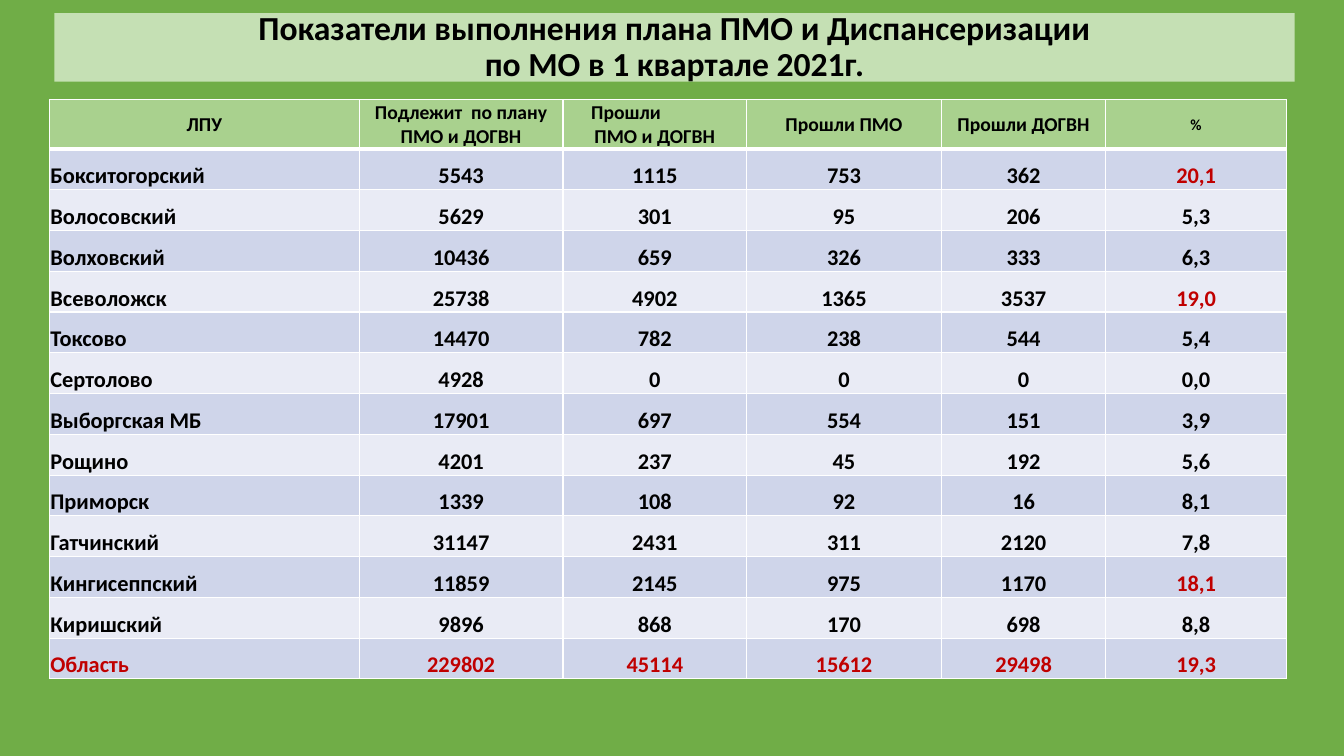
from lxml.etree import SubElement
from pptx import Presentation
from pptx.dml.color import RGBColor
from pptx.enum.shapes import MSO_SHAPE
from pptx.enum.text import MSO_ANCHOR, PP_ALIGN
from pptx.oxml.ns import qn
from pptx.util import Inches, Pt

COLORS = {
    "page": "70AD47", "title": "C5E0B4", "header": "A9D18E",
    "band": "CFD5EA", "light": "E9EBF5", "border": "FFFFFF",
    "text": "000000", "accent": "C00000",
}
FONT = "Calibri"
TITLE_LINES = ["Показатели выполнения плана ПМО и Диспансеризации", "по МО в 1 квартале 2021г."]
HEADERS = [["ЛПУ"], ["Подлежит  по плану ПМО и ДОГВН"], ["Прошли", "ПМО и ДОГВН"],
           ["Прошли ПМО"], ["Прошли ДОГВН"], ["%"]]
COLUMN_SHARES = [3.07, 2.02, 1.82, 1.93, 1.63, 1.79]
HEADER_SHARE = 0.085
PERCENT_COLUMN = 5
HIGH_PERCENT = 18
TOTAL_NAME = "Область"
ROWS = [
    ["Бокситогорский", "5543", "1115", "753", "362", "20,1"],
    ["Волосовский", "5629", "301", "95", "206", "5,3"],
    ["Волховский", "10436", "659", "326", "333", "6,3"],
    ["Всеволожск", "25738", "4902", "1365", "3537", "19,0"],
    ["Токсово", "14470", "782", "238", "544", "5,4"],
    ["Сертолово", "4928", "0", "0", "0", "0,0"],
    ["Выборгская МБ", "17901", "697", "554", "151", "3,9"],
    ["Рощино", "4201", "237", "45", "192", "5,6"],
    ["Приморск", "1339", "108", "92", "16", "8,1"],
    ["Гатчинский", "31147", "2431", "311", "2120", "7,8"],
    ["Кингисеппский", "11859", "2145", "975", "1170", "18,1"],
    ["Киришский", "9896", "868", "170", "698", "8,8"],
    [TOTAL_NAME, "229802", "45114", "15612", "29498", "19,3"],
]


def color(name):
    return RGBColor.from_string(COLORS[name])


def paint(target, name):
    target.fill.solid()
    target.fill.fore_color.rgb = color(name)


def add_span(para, text, size, ink="text"):
    span = para.add_run()
    span.text = text
    span.font.name = FONT
    span.font.size = Pt(size)
    span.font.bold = True
    span.font.color.rgb = color(ink)


def add_title(page, left, top, width, height):
    box = page.shapes.add_shape(MSO_SHAPE.RECTANGLE, left, top, width, height)
    box.shadow.inherit = False
    box.line.fill.background()
    paint(box, "title")
    frame = box.text_frame
    frame.word_wrap = True
    frame.vertical_anchor = MSO_ANCHOR.MIDDLE
    frame.margin_top = frame.margin_bottom = Inches(0.05)
    para = frame.paragraphs[0]
    para.alignment = PP_ALIGN.CENTER
    para.line_spacing = 0.9
    for index, line in enumerate(TITLE_LINES):
        if index:
            para.add_line_break()
        add_span(para, line, 24)


def add_borders(cell, top=1, bottom=1):
    """Draw the four cell borders; must run before the cell is filled."""
    properties = cell._tc.get_or_add_tcPr()
    for side, points in (("L", 1), ("R", 1), ("T", top), ("B", bottom)):
        line = SubElement(properties, qn(f"a:ln{side}"), w=str(Pt(points)))
        fill = SubElement(line, qn("a:solidFill"))
        SubElement(fill, qn("a:srgbClr"), val=COLORS["border"])


def fill_cell(cell, lines, size, fill, anchor, align=PP_ALIGN.CENTER, ink="text"):
    paint(cell, fill)
    cell.vertical_anchor = anchor
    cell.margin_left = cell.margin_right = cell.margin_top = Inches(0.01)
    cell.margin_bottom = 0
    frame = cell.text_frame
    for index, line in enumerate(lines):
        para = frame.add_paragraph() if index else frame.paragraphs[0]
        para.alignment = align
        add_span(para, line, size, ink)


def fill_header(table):
    for column, lines in enumerate(HEADERS):
        cell = table.cell(0, column)
        add_borders(cell, bottom=3)
        size = 11 if column == PERCENT_COLUMN else 14
        fill_cell(cell, lines, size, "header", MSO_ANCHOR.MIDDLE)
        if len(lines) > 1:
            first = cell.text_frame.paragraphs[0]
            first.alignment = PP_ALIGN.LEFT
            first._p.get_or_add_pPr().set("marL", str(Inches(0.27)))


def fill_body(table):
    for row, values in enumerate(ROWS, start=1):
        is_total = values[0] == TOTAL_NAME
        for column, value in enumerate(values):
            is_high = (column == PERCENT_COLUMN
                       and float(value.replace(",", ".")) >= HIGH_PERCENT)
            cell = table.cell(row, column)
            add_borders(cell, top=3 if row == 1 else 1)
            fill_cell(cell, [value], 16, "band" if row % 2 else "light", MSO_ANCHOR.BOTTOM,
                      PP_ALIGN.CENTER if column else PP_ALIGN.LEFT,
                      "accent" if is_total or is_high else "text")


def add_results_table(page, left, top, width, height):
    table = page.shapes.add_table(len(ROWS) + 1, len(HEADERS), left, top, width, height).table
    table.first_row = False
    table.horz_banding = False
    for column, share in zip(table.columns, COLUMN_SHARES):
        column.width = int(width * share / sum(COLUMN_SHARES))
    header_height = int(height * HEADER_SHARE)
    for index, row in enumerate(table.rows):
        row.height = (height - header_height) // len(ROWS) if index else header_height
    fill_header(table)
    fill_body(table)


def main():
    deck = Presentation()
    deck.slide_width, deck.slide_height = Inches(13.33), Inches(7.5)
    page = deck.slides.add_slide(deck.slide_layouts[6])
    paint(page.background, "page")
    add_title(page, Inches(0.54), Inches(0.13), Inches(12.3), Inches(0.68))
    add_results_table(page, Inches(0.49), Inches(0.99), Inches(12.27), Inches(5.75))
    deck.save("out.pptx")


if __name__ == "__main__":
    main()
